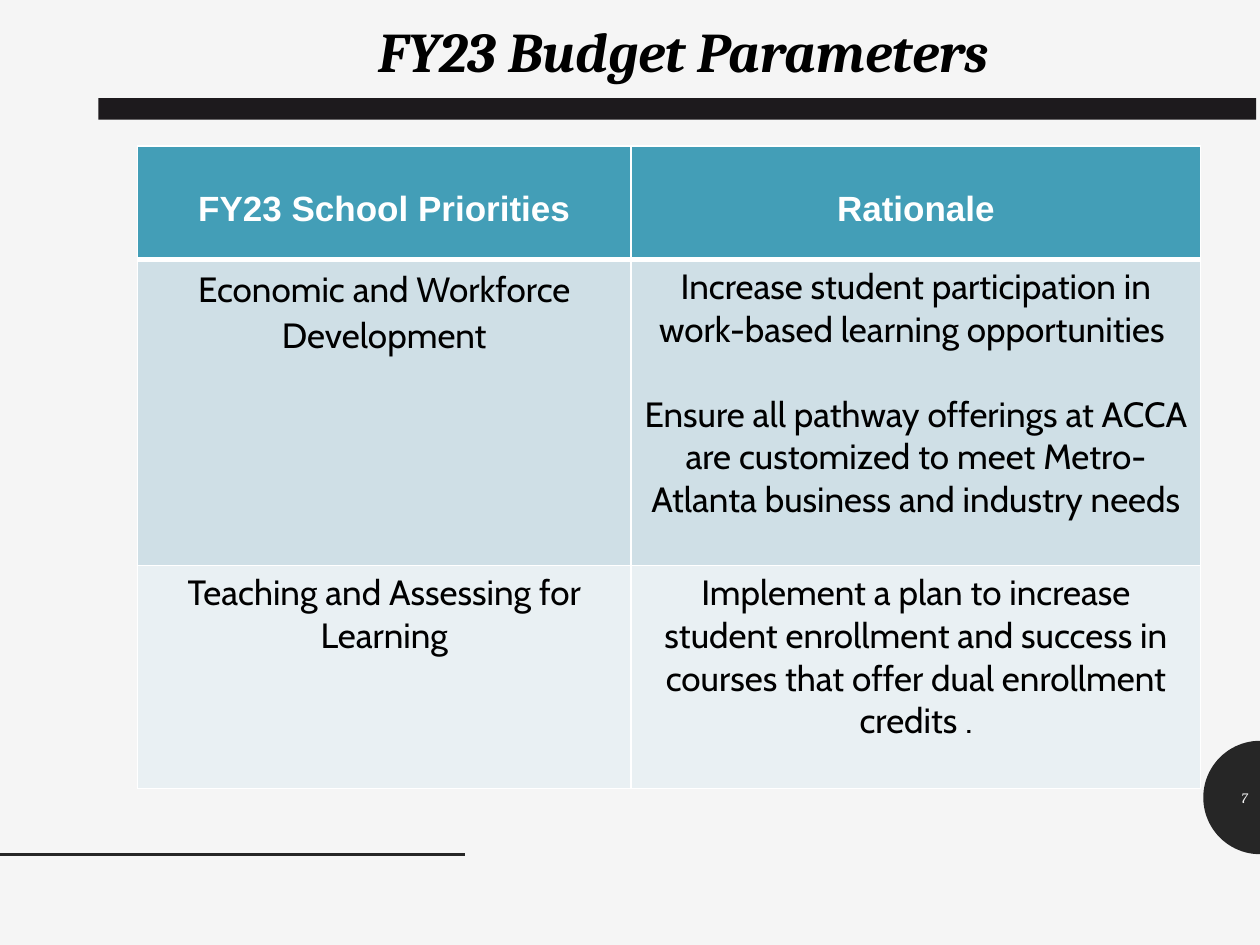
import math

import pptx
import pptx.util
from lxml import etree
from pptx.dml.color import RGBColor
from pptx.enum.shapes import MSO_CONNECTOR, MSO_SHAPE
from pptx.enum.text import MSO_ANCHOR, MSO_AUTO_SIZE, PP_ALIGN
from pptx.oxml.ns import qn
from pptx.util import Inches

COLORS = {name: RGBColor.from_string(value) for name, value in {
    "background": "F5F5F5", "dark": "262626", "bar": "1D1A1D",
    "black": "000000", "white": "FFFFFF", "header": "439EB7",
    "band 1": "CFDFE6", "band 2": "E9F0F3",
}.items()}


def format_paragraph(paragraph, align, font_name, size, color, bold=False, italic=False):
    paragraph.alignment = align
    font = paragraph.font
    font.name, font.size = font_name, pptx.util.Pt(size)
    font.bold, font.italic = bold, italic
    font.color.rgb = COLORS[color]


def add_borders(cell, widths):
    """Draw white cell borders; widths maps L, R, T, B to points."""
    properties = cell._tc.get_or_add_tcPr()
    for index, (side, width) in enumerate(widths.items()):
        border = etree.Element(qn(f"a:ln{side}"), w=str(pptx.util.Pt(width)))
        fill = etree.SubElement(border, qn("a:solidFill"))
        etree.SubElement(fill, qn("a:srgbClr"), val=str(COLORS["white"]))
        properties.insert(index, border)


presentation = pptx.Presentation()
presentation.slide_width, presentation.slide_height = Inches(10), Inches(7.5)
slide = presentation.slides.add_slide(presentation.slide_layouts[5])
slide.background.fill.solid()
slide.background.fill.fore_color.rgb = COLORS["background"]

# Half circle behind the page number
center_y, radius, steps = 6.33, 0.45, 48
arc = []
for step in range(steps + 1):
    angle = math.pi * step / steps
    arc.append((Inches(10 - radius * math.sin(angle)),
                Inches(center_y - radius * math.cos(angle))))
builder = slide.shapes.build_freeform(*arc[0])
builder.add_line_segments(arc[1:], close=True)
page_tab = builder.convert_to_shape()

title_bar = slide.shapes.add_shape(
    MSO_SHAPE.RECTANGLE, Inches(0.78), Inches(0.78), Inches(9.19), Inches(0.17))
for solid, color in ((page_tab, "dark"), (title_bar, "bar")):
    solid.shadow.inherit = False
    solid.fill.solid()
    solid.fill.fore_color.rgb = COLORS[color]
    solid.line.fill.background()

footer_rule = slide.shapes.add_connector(
    MSO_CONNECTOR.STRAIGHT, Inches(0), Inches(6.78), Inches(3.69), Inches(6.78))
footer_rule.line.color.rgb = COLORS["dark"]
footer_rule.line.width = pptx.util.Pt(2)
etree.SubElement(footer_rule._element.spPr, qn("a:effectLst"))

title = slide.shapes.title
title.left, title.top = Inches(0.96), Inches(0.08)
title.width, title.height = Inches(8.93), Inches(0.64)
title.text_frame.text = "FY23 Budget Parameters"
title.text_frame.auto_size = MSO_AUTO_SIZE.NONE
title.text_frame.vertical_anchor = MSO_ANCHOR.TOP
format_paragraph(title.text_frame.paragraphs[0], PP_ALIGN.CENTER, "Cambria", 32,
                 "black", bold=True, italic=True)

# Each cell is a list of paragraphs
priorities = [
    [["FY23 School Priorities"], ["Rationale"]],
    [["Economic and Workforce Development"],
     ["Increase student participation in work-based learning opportunities ",
      "Ensure all pathway offerings at ACCA are customized to meet "
      "Metro-Atlanta business and industry needs"]],
    [["Teaching and Assessing for Learning"],
     ["Implement a plan to increase student enrollment and success in courses "
      "that offer dual enrollment credits ."]],
]
column_widths = [3.92, 4.52]
row_heights = [0.9, 2.43, 1.77]
row_fills = ["header", "band 1", "band 2"]

table = slide.shapes.add_table(
    len(row_heights), len(column_widths), Inches(1.09), Inches(1.16),
    Inches(sum(column_widths)), Inches(sum(row_heights))).table
for column, width in zip(table.columns, column_widths):
    column.width = Inches(width)
for row, height in zip(table.rows, row_heights):
    row.height = Inches(height)

for row_index, row_cells in enumerate(priorities):
    is_header = row_index == 0
    for column_index, texts in enumerate(row_cells):
        cell = table.cell(row_index, column_index)
        cell.fill.solid()
        cell.fill.fore_color.rgb = COLORS[row_fills[row_index]]
        add_borders(cell, {"L": 1, "R": 1, "T": 3 if row_index == 1 else 1,
                           "B": 3 if is_header else 1})
        if is_header:
            cell.margin_top = Inches(0.35)
        cell.text_frame.text = "\n".join(texts)
        for paragraph in cell.text_frame.paragraphs:
            format_paragraph(paragraph, PP_ALIGN.CENTER, "Arial" if is_header else "Cabin",
                             20, "white" if is_header else "black", bold=is_header)
        for paragraph in cell.text_frame.paragraphs[1:]:
            paragraph.space_before = pptx.util.Pt(24)

workforce = table.cell(1, 0).text_frame.paragraphs[0]
workforce.line_spacing = 1.07
workforce.space_after = pptx.util.Pt(8)

page_number = slide.shapes.add_textbox(
    Inches(9.55), Inches(6.13), Inches(0.45), Inches(0.4)).text_frame
page_number.word_wrap = True
page_number.vertical_anchor = MSO_ANCHOR.MIDDLE
page_number.text = "7"
format_paragraph(page_number.paragraphs[0], PP_ALIGN.RIGHT, "Cambria", 8.2,
                 "background", italic=True)

presentation.save("out.pptx")
